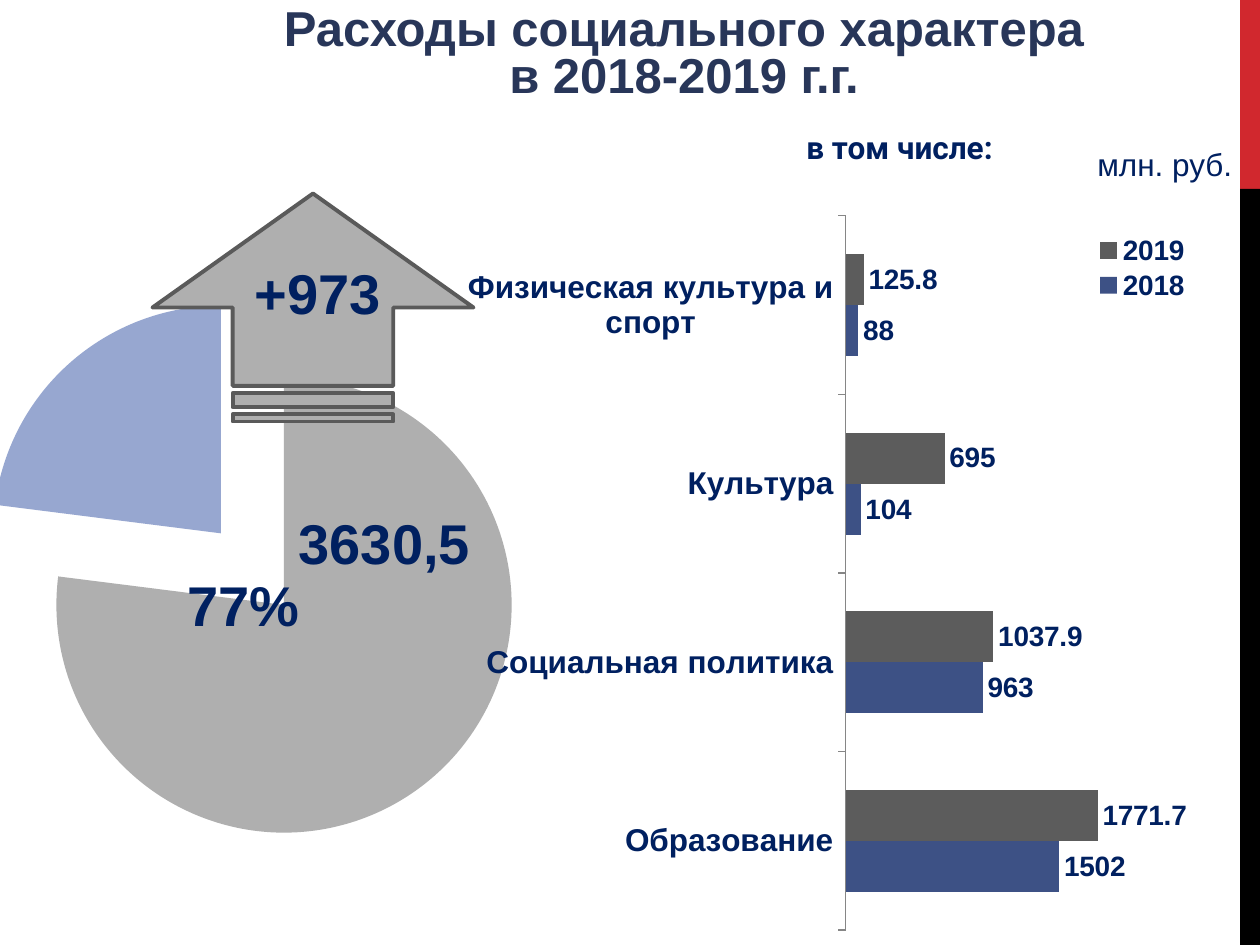
import pptx
import pptx.chart.data
import pptx.dml.color
import pptx.enum.chart
import pptx.enum.shapes
import pptx.enum.text
import pptx.oxml
import pptx.oxml.ns
import pptx.util

SCALE = 914400 / 126
COLORS = {
    "title": "283659", "text": "002060", "red": "D1282E", "black": "000000",
    "grey": "AFAFAF", "outline": "5A5A5A", "light_blue": "97A7D0",
    "2018": "3D5185", "2019": "5C5C5C", "axis": "868686",
}
SHAPES = pptx.enum.shapes.MSO_SHAPE
ALIGN = pptx.enum.text.PP_ALIGN
ANCHOR = pptx.enum.text.MSO_ANCHOR
CHARTS = pptx.enum.chart.XL_CHART_TYPE


def px(value):
    return pptx.util.Emu(round(value * SCALE))


def rgb(name):
    return pptx.dml.color.RGBColor.from_string(COLORS[name])


def chart_xml(text):
    return pptx.oxml.parse_xml(text.replace(">", f" {pptx.oxml.ns.nsdecls('c')}>", 1))


def manual_layout(x, y, w, h, inner=False):
    """Layout element in fractions of the chart area."""
    target = '<c:layoutTarget val="inner"/>' if inner else ""
    return chart_xml(
        f'<c:layout><c:manualLayout>{target}<c:xMode val="edge"/><c:yMode val="edge"/>'
        f'<c:x val="{x}"/><c:y val="{y}"/><c:w val="{w}"/><c:h val="{h}"/>'
        "</c:manualLayout></c:layout>")


class SlideBuilder:
    font = "Arial"

    def __init__(self, slide):
        self.slide = slide

    def style(self, font, size, color="text", bold=True, name=None):
        font.name = name or self.font
        font.size = pptx.util.Pt(size)
        font.bold = bold
        font.color.rgb = rgb(color)

    def place(self, shape, box):
        shape.left, shape.top, shape.width, shape.height = map(px, box)

    def title(self, box, lines):
        heading = self.slide.shapes.title
        self.place(heading, box)
        frame = heading.text_frame
        frame.word_wrap = True
        frame.auto_size = pptx.enum.text.MSO_AUTO_SIZE.NONE
        frame.vertical_anchor = ANCHOR.BOTTOM
        for index, line in enumerate(lines):
            paragraph = frame.add_paragraph() if index else frame.paragraphs[0]
            paragraph.alignment = ALIGN.CENTER
            paragraph.line_spacing = 0.8
            paragraph.space_before = pptx.util.Pt(0)
            run = paragraph.add_run()
            run.text = line
            self.style(run.font, 28, "title")

    def shape(self, kind, box, fill=None, line=None, rotation=0):
        item = self.slide.shapes.add_shape(kind, *map(px, box))
        item.shadow.inherit = False
        item.rotation = rotation
        if fill:
            item.fill.solid()
            item.fill.fore_color.rgb = rgb(fill)
        else:
            item.fill.background()
        if line:
            item.line.color.rgb = rgb(line)
            item.line.width = pptx.util.Pt(2.25)
        else:
            item.line.fill.background()
        return item

    def add_words(self, holder, text, size, align, **style):
        frame = holder.text_frame
        frame.word_wrap = True
        paragraph = frame.paragraphs[0]
        paragraph.alignment = align
        run = paragraph.add_run()
        run.text = text
        self.style(run.font, size, **style)

    def text(self, box, text, size, align=ALIGN.LEFT, **style):
        holder = self.slide.shapes.add_textbox(*map(px, box))
        self.add_words(holder, text, size, align, **style)

    def rounded_label(self, box, text):
        holder = self.shape(SHAPES.ROUNDED_RECTANGLE, box)
        holder.text_frame.vertical_anchor = ANCHOR.MIDDLE
        self.add_words(holder, text, 32, ALIGN.CENTER)

    def chart(self, kind, box, categories, series, plot, size):
        data = pptx.chart.data.CategoryChartData()
        data.categories = categories
        for name, values in series.items():
            data.add_series(name, values)
        chart = self.slide.shapes.add_chart(kind, *map(px, box), data).chart
        chart.has_title = False
        chart.has_legend = False
        self.style(chart.font, size)
        area = chart.plots[0]
        area.vary_by_categories = kind == CHARTS.PIE
        plot_area = chart.element.chart.plotArea if hasattr(chart, "element") else \
            chart._chartSpace.chart.plotArea
        for old in plot_area.findall(pptx.oxml.ns.qn("c:layout")):
            plot_area.remove(old)
        plot_area.insert(0, manual_layout(*plot, inner=True))
        return chart

    def pie(self, box, values, colors, plot, explosion):
        chart = self.chart(CHARTS.PIE, box, ["1", "2"], {"Series 1": values}, plot, 18)
        series = chart.plots[0].series[0]
        name = series._element.find(pptx.oxml.ns.qn("c:tx"))
        name.addnext(chart_xml(f'<c:explosion val="{explosion}"></c:explosion>'))
        for index, color in enumerate(colors):
            slice_format = series.points[index].format
            slice_format.fill.solid()
            slice_format.fill.fore_color.rgb = rgb(color)
            slice_format.line.fill.background()

    def bars(self, box, categories, series, plot, legend):
        chart = self.chart(CHARTS.BAR_CLUSTERED, box, categories, series, plot, 16)
        area = chart.plots[0]
        area.gap_width = 150
        area.overlap = 0
        for item in area.series:
            item.format.fill.solid()
            item.format.fill.fore_color.rgb = rgb(item.name)
            labels = item.data_labels
            labels.show_value = True
            labels.number_format = "General"
            labels.number_format_is_linked = False
            labels.position = pptx.enum.chart.XL_LABEL_POSITION.OUTSIDE_END
            self.style(labels.font, 16)
        axis = chart.value_axis
        axis.visible = False
        axis.has_major_gridlines = False
        axis.minimum_scale, axis.maximum_scale = 0, 2000
        axis = chart.category_axis
        axis.major_tick_mark = pptx.enum.chart.XL_TICK_MARK.OUTSIDE
        axis.format.line.color.rgb = rgb("axis")
        self.style(axis.tick_labels.font, 18)
        chart.has_legend = True
        chart.legend.position = pptx.enum.chart.XL_LEGEND_POSITION.RIGHT
        chart.legend.include_in_layout = False
        self.style(chart.legend.font, 16)
        position = chart.legend._element.find(pptx.oxml.ns.qn("c:legendPos"))
        for old in chart.legend._element.findall(pptx.oxml.ns.qn("c:layout")):
            chart.legend._element.remove(old)
        position.addnext(manual_layout(*legend))


def main():
    deck = pptx.Presentation()
    deck.slide_width, deck.slide_height = px(1260), px(945)
    page = SlideBuilder(deck.slides.add_slide(deck.slide_layouts[5]))

    page.shape(SHAPES.RECTANGLE, (1240, 0, 20, 189), "red")
    page.shape(SHAPES.RECTANGLE, (1240, 189, 20, 756), "black")
    page.title((108, -4, 1152, 113),
               ["Расходы социального характера", "в 2018-2019 г.г."])

    page.pie((-23, 168, 580, 750), [77, 23], ["grey", "light_blue"],
             (0, 0.07, 0.95, 0.93), 21)
    page.shape(SHAPES.STRIPED_RIGHT_ARROW, (199, 147, 228, 321),
               "grey", "outline", rotation=270)
    page.text((214, 252, 208, 81), "+973", 32, ALIGN.CENTER)
    page.rounded_label((111, 560, 265, 89), "77%")
    page.rounded_label((252, 498, 265, 89), "3630,5")

    page.text((794, 122, 339, 50), "в том числе:", 18, name="Roboto")
    page.text((1085, 139, 175, 50), "млн. руб.", 18, bold=False)
    page.bars((448, 201, 812, 744),
              ["Образование", "Социальная политика", "Культура",
               "Физическая культура и спорт"],
              {"2018": [1502, 963, 104, 88], "2019": [1771.7, 1037.9, 695, 125.8]},
              plot=(0.49, 0.02, 0.35, 0.96), legend=(0.79, 0.04, 0.13, 0.1))
    deck.save("out.pptx")


if __name__ == "__main__":
    main()
